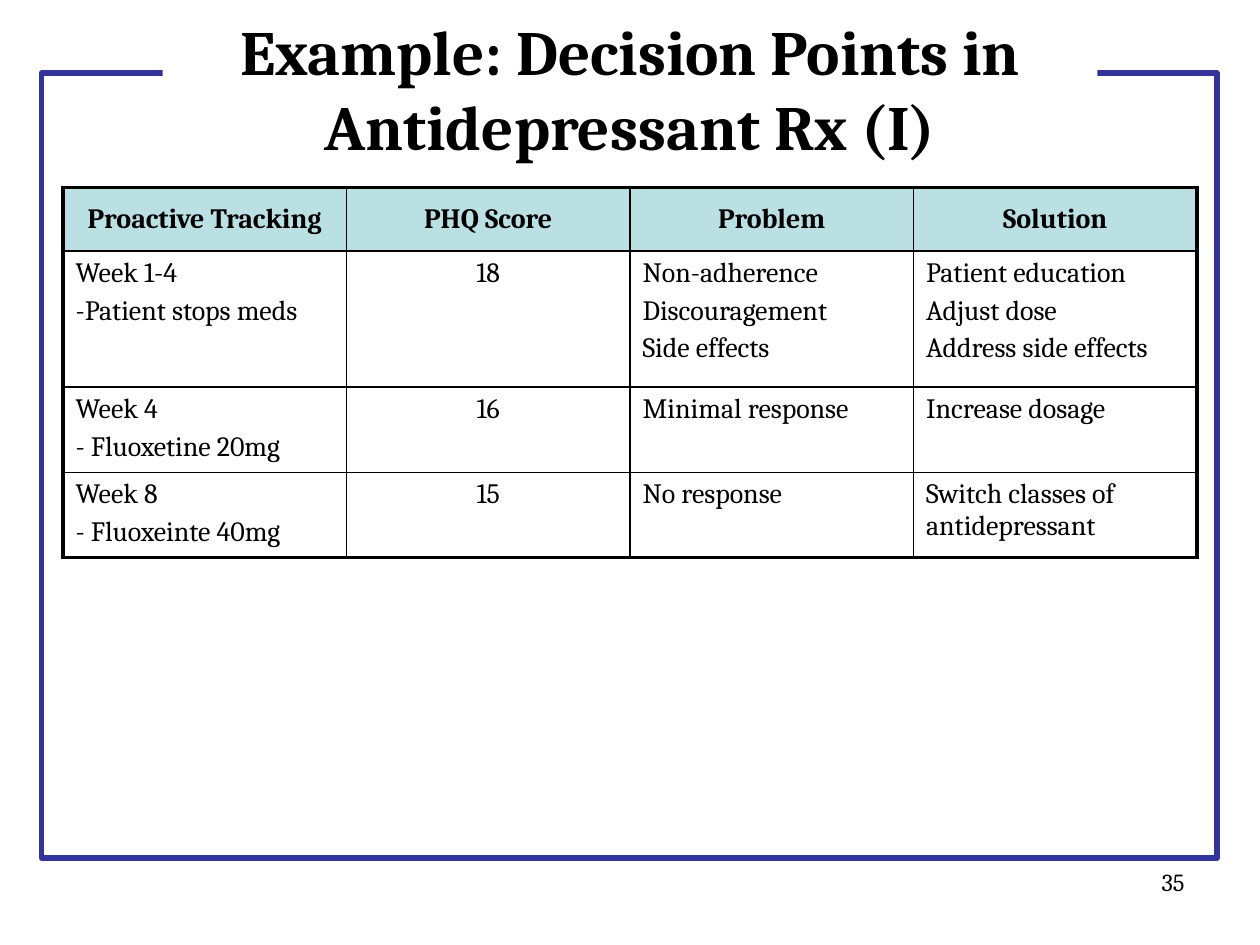
from pptx import Presentation
from pptx.dml.color import RGBColor
from pptx.enum.shapes import MSO_SHAPE
from pptx.enum.text import MSO_ANCHOR, PP_ALIGN
from pptx.oxml.ns import qn
from pptx.util import Inches, Pt
from lxml import etree

RECT = MSO_SHAPE.RECTANGLE
MIDDLE, TOP = MSO_ANCHOR.MIDDLE, MSO_ANCHOR.TOP
LEFT, CENTER, RIGHT = PP_ALIGN.LEFT, PP_ALIGN.CENTER, PP_ALIGN.RIGHT
BLACK = RGBColor(0x00, 0x00, 0x00)
WHITE = RGBColor(0xFF, 0xFF, 0xFF)
BLUE = RGBColor(0x33, 0x33, 0x99)
TEAL = RGBColor(0xBB, 0xE0, 0xE3)
FONT = "Cambria"
THIN, THICK = Pt(1), Pt(2.25)

TITLE = "Example: Decision Points in Antidepressant Rx (I)"
PAGE = "35"
ROWS = [
    ("Proactive Tracking", "PHQ Score", "Problem", "Solution"),
    ("Week 1-4\n-Patient stops meds", "18",
     "Non-adherence\nDiscouragement\nSide effects",
     "Patient education\nAdjust dose\nAddress side effects"),
    ("Week 4\n- Fluoxetine 20mg", "16", "Minimal response", "Increase dosage"),
    ("Week 8\n- Fluoxeinte 40mg", "15", "No response",
     "Switch classes of antidepressant"),
]
HEIGHTS = [0.5, 1.08, 0.67, 0.66]
SCORE = 1


def box(*nums):
    return [Inches(n) for n in nums]


def write(frame, text, size, align, bold=False, gap=0):
    frame.text = text
    frame.word_wrap = True
    for para in frame.paragraphs:
        para.alignment = align
        para.space_before = Pt(gap)
        for run in para.runs:
            font = run.font
            font.name, font.size, font.bold = FONT, Pt(size), bold
            font.color.rgb = BLACK


def edge(cell, side, width):
    line = etree.SubElement(cell._tc.get_or_add_tcPr(), qn("a:ln" + side), w=str(width))
    fill = etree.SubElement(line, qn("a:solidFill"))
    etree.SubElement(fill, qn("a:srgbClr"), val=str(BLACK))


def add_grid(slide):
    count, wide = len(ROWS), len(ROWS[0])
    table = slide.shapes.add_table(count, wide, *box(0.5, 1.49, 9, sum(HEIGHTS))).table
    for row, high in zip(table.rows, HEIGHTS):
        row.height = Inches(high)
    for r, texts in enumerate(ROWS):
        for c, text in enumerate(texts):
            cell = table.cell(r, c)
            head = r == 0
            align = CENTER if head or c == SCORE else LEFT
            write(cell.text_frame, text, 16, align, head, 3.2)
            cell.vertical_anchor = MIDDLE if head else TOP
            outer = {"L": c == 0, "R": c == wide - 1, "T": head, "B": r == count - 1}
            for side, thick in outer.items():
                edge(cell, side, THICK if thick else THIN)
            if head:
                cell.fill.solid()
                cell.fill.fore_color.rgb = TEAL
            else:
                cell.fill.background()


def add_frame(slide):
    frame = slide.shapes.add_shape(RECT, *box(0.33, 0.58, 9.33, 6.23))
    frame.shadow.inherit = False
    frame.fill.background()
    frame.line.color.rgb = BLUE
    frame.line.width = Pt(3)


def add_title(slide):
    title = slide.shapes.add_shape(RECT, *box(1.29, 0.22, 7.42, 0.95))
    title.shadow.inherit = False
    title.fill.solid()
    title.fill.fore_color.rgb = WHITE
    title.line.fill.background()
    title.text_frame.vertical_anchor = MIDDLE
    write(title.text_frame, TITLE, 36, CENTER, True)


def main():
    deck = Presentation()
    deck.slide_width, deck.slide_height = box(10, 7.5)
    slide = deck.slides.add_slide(deck.slide_layouts[6])
    page = slide.shapes.add_textbox(*box(7.17, 6.83, 2.33, 0.52))
    write(page.text_frame, PAGE, 14, RIGHT)
    add_grid(slide)
    add_frame(slide)
    add_title(slide)
    deck.save("out.pptx")


if __name__ == "__main__":
    main()
